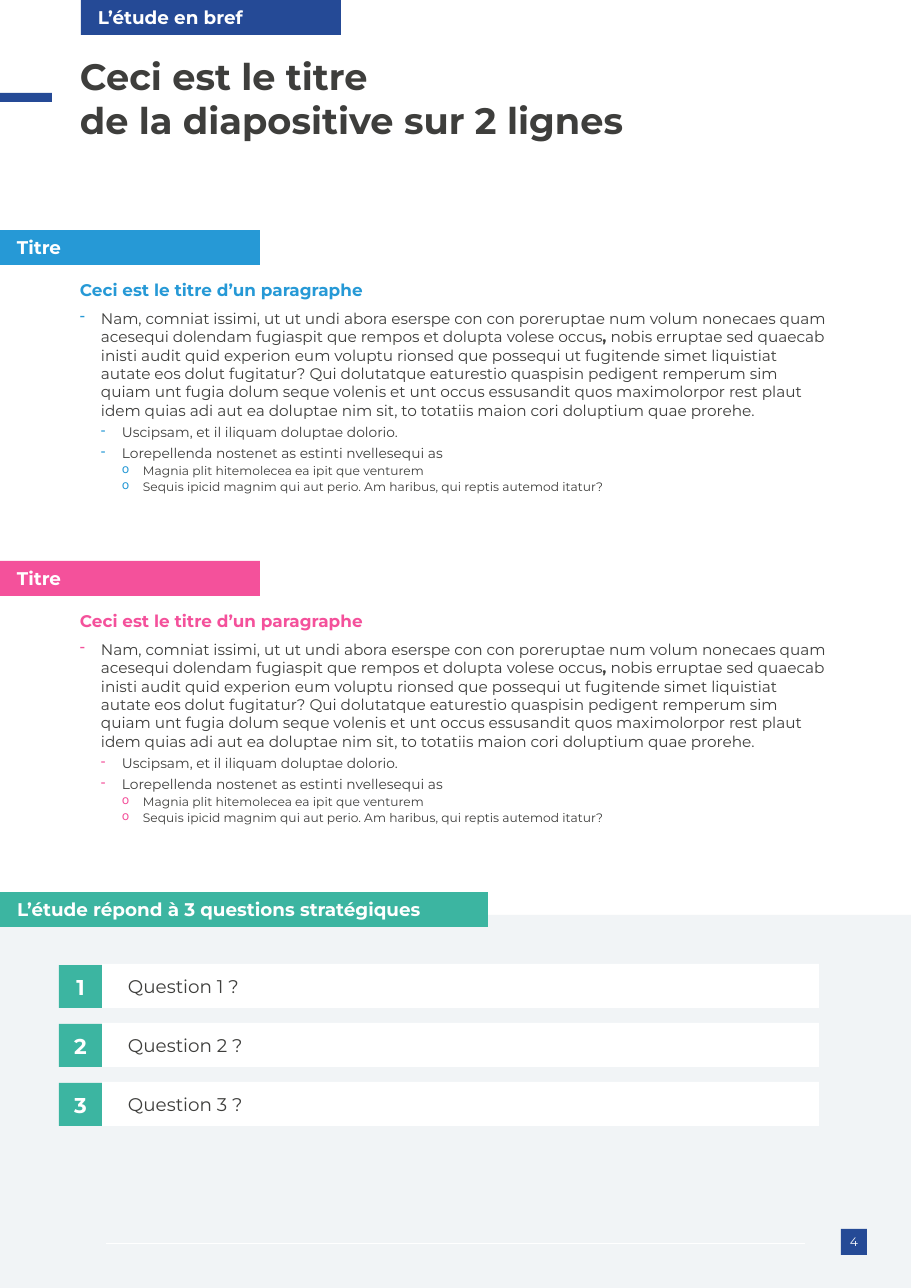
"""Build the one-page study summary slide."""
from lxml.etree import SubElement
from pptx import Presentation
from pptx.dml.color import RGBColor
from pptx.enum.shapes import MSO_CONNECTOR as CONN, MSO_SHAPE as SHAPE
from pptx.enum.text import MSO_ANCHOR as ANCHOR, PP_ALIGN as ALIGN
from pptx.oxml.ns import qn
from pptx.util import Emu, Pt

PX = 8300
PAGE_W, PAGE_H = 911, 1288
FONT = "Montserrat"
NAVY, BLUE, PINK, GREEN = "254A96", "2699D6", "F4519B", "3CB5A1"
DARK, WHITE, PALE = "3E3E3C", "FFFFFF", "F1F4F6"

TAG = "L’étude en bref"
TITLE = "Ceci est le titre\vde la diapositive sur 2 lignes"
PAGE_NUMBER = "4"
SECTION_TITLE = "Titre"
HEADING = "Ceci est le titre d’un paragraphe"
INTRO = [
    ("Nam, comniat issimi, ut ut undi abora eserspe con con poreruptae num volum "
     "nonecaes quam acesequi dolendam fugiaspit que rempos et dolupta volese occus", False),
    (", ", True),
    ("nobis erruptae sed quaecab inisti audit quid experion eum voluptu rionsed que "
     "possequi ut fugitende simet liquistiat autate eos dolut fugitatur? Qui dolutatque "
     "eaturestio quaspisin pedigent remperum sim quiam unt fugia dolum seque volenis et "
     "unt occus essusandit quos maximolorpor rest plaut idem quias adi aut ea doluptae "
     "nim sit, to totatiis maion cori doluptium quae prorehe.", False),
]
BULLETS = [
    (1, 3, INTRO),
    (2, 3, [("Uscipsam, et il iliquam doluptae dolorio.", False)]),
    (2, 1, [("Lorepellenda nostenet as estinti nvellesequi as", False)]),
    (3, 1, [("Magnia plit hitemolecea ea ipit que venturem", False)]),
    (3, 6, [("Sequis ipicid magnim qui aut perio. Am haribus, qui reptis autemod itatur?", False)]),
]
LEVELS = {1: (10, "-"), 2: (9, "-"), 3: (8, "o")}
SECTIONS = [(BLUE, 207), (PINK, 231)]
QUESTIONS_TITLE = "L’étude répond à 3 questions stratégiques"
QUESTIONS = ["Question 1 ?", "Question 2 ?", "Question 3 ?"]

BAR_W, BAR_H, BAR_INSET = 260, 35, 17
TEXT_X, TEXT_W = 80, 750
SECTION_Y, SECTION_STEP = 230, 331
QUESTION_Y, QUESTION_STEP = 965, 59
BADGE_X, BADGE = 59, 43
INDENT = 21


def rgb(hex_color):
    return RGBColor.from_string(hex_color)


def px(*values):
    return [Emu(v * PX) for v in values]


def frame(sp, anchor, inset=0):
    tf = sp.text_frame
    formats = dict(word_wrap=True, vertical_anchor=anchor, margin_left=Emu(inset * PX),
                   margin_top=0, margin_right=0, margin_bottom=0)
    for name, value in formats.items():
        setattr(tf, name, value)
    return tf


def style(runs, size, color, bold=False):
    for r in runs:
        for name, value in dict(name=FONT, size=Pt(size), bold=bold).items():
            setattr(r.font, name, value)
        r.font.color.rgb = rgb(color)


def write(tf, text, size, color, bold=False, align=ALIGN.LEFT):
    p = tf.paragraphs[0]
    p.text, p.alignment = text, align
    style(p.runs, size, color, bold)


def rect(s, box, fill):
    sp = s.shapes.add_shape(SHAPE.RECTANGLE, *px(*box))
    sp.shadow.inherit = False
    sp.fill.solid()
    sp.fill.fore_color.rgb = rgb(fill)
    sp.line.fill.background()
    return sp


def label(s, box, fill, text, size=12, color=WHITE, bold=True, inset=0, align=ALIGN.LEFT):
    tf = frame(rect(s, box, fill), ANCHOR.MIDDLE, inset)
    write(tf, text, size, color, bold, align)


def bar(s, x, y, w, fill, text):
    label(s, (x, y, w, BAR_H), fill, text, inset=BAR_INSET)


def text_box(s, box, anchor=ANCHOR.TOP):
    return frame(s.shapes.add_textbox(*px(*box)), anchor)


def bullet(p, level, color):
    pPr = p._p.get_or_add_pPr()
    pPr.set("marL", str(level * INDENT * PX))
    pPr.set("indent", str(-INDENT * PX))
    SubElement(SubElement(pPr, qn("a:buClr")), qn("a:srgbClr")).set("val", color)
    SubElement(pPr, qn("a:buChar")).set("char", LEVELS[level][1])


def section(s, y, color, body_h):
    bar(s, 0, y, BAR_W, color, SECTION_TITLE)
    write(text_box(s, (TEXT_X, y + 50, TEXT_W, 21)), HEADING, 11, color, True)
    tf = text_box(s, (TEXT_X, y + 79, TEXT_W, body_h))
    for i, (level, after, parts) in enumerate(BULLETS):
        p = tf.add_paragraph() if i else tf.paragraphs[0]
        p.level, p.space_after = level, Pt(after)
        bullet(p, level, color)
        for text, bold in parts:
            r = p.add_run()
            r.text = text
            style([r], LEVELS[level][0], DARK, bold)


def question(s, y, number, text):
    label(s, (BADGE_X, y, BADGE, BADGE), GREEN, str(number), size=14, align=ALIGN.CENTER)
    label(s, (BADGE_X + BADGE, y - 1, 717, BADGE + 1), WHITE, text, color=DARK,
          bold=False, inset=26)


def footer(s):
    rect(s, (0, 915, PAGE_W, PAGE_H - 915), PALE)
    label(s, (841, 1229, 26, 26), NAVY, PAGE_NUMBER, size=8, bold=False, align=ALIGN.CENTER)
    rule = s.shapes.add_connector(CONN.STRAIGHT, *px(106, 1243, 805, 1243))
    rule.line.color.rgb = rgb(WHITE)
    rule.line.width = Pt(0.5)
    SubElement(rule._element.spPr, qn("a:effectLst"))


def main():
    prs = Presentation()
    prs.slide_width, prs.slide_height = px(PAGE_W, PAGE_H)
    s = prs.slides.add_slide(prs.slide_layouts[6])
    footer(s)
    rect(s, (0, 93, 52, 9), NAVY)
    bar(s, TEXT_X + 1, 0, BAR_W, NAVY, TAG)
    write(text_box(s, (TEXT_X, 53, TEXT_W, 89), ANCHOR.MIDDLE), TITLE, 24, DARK, True)
    for i, (color, body_h) in enumerate(SECTIONS):
        section(s, SECTION_Y + i * SECTION_STEP, color, body_h)
    bar(s, 0, SECTION_Y + len(SECTIONS) * SECTION_STEP, 488, GREEN, QUESTIONS_TITLE)
    for i, text in enumerate(QUESTIONS):
        question(s, QUESTION_Y + i * QUESTION_STEP, i + 1, text)
    prs.save("out.pptx")


if __name__ == "__main__":
    main()
